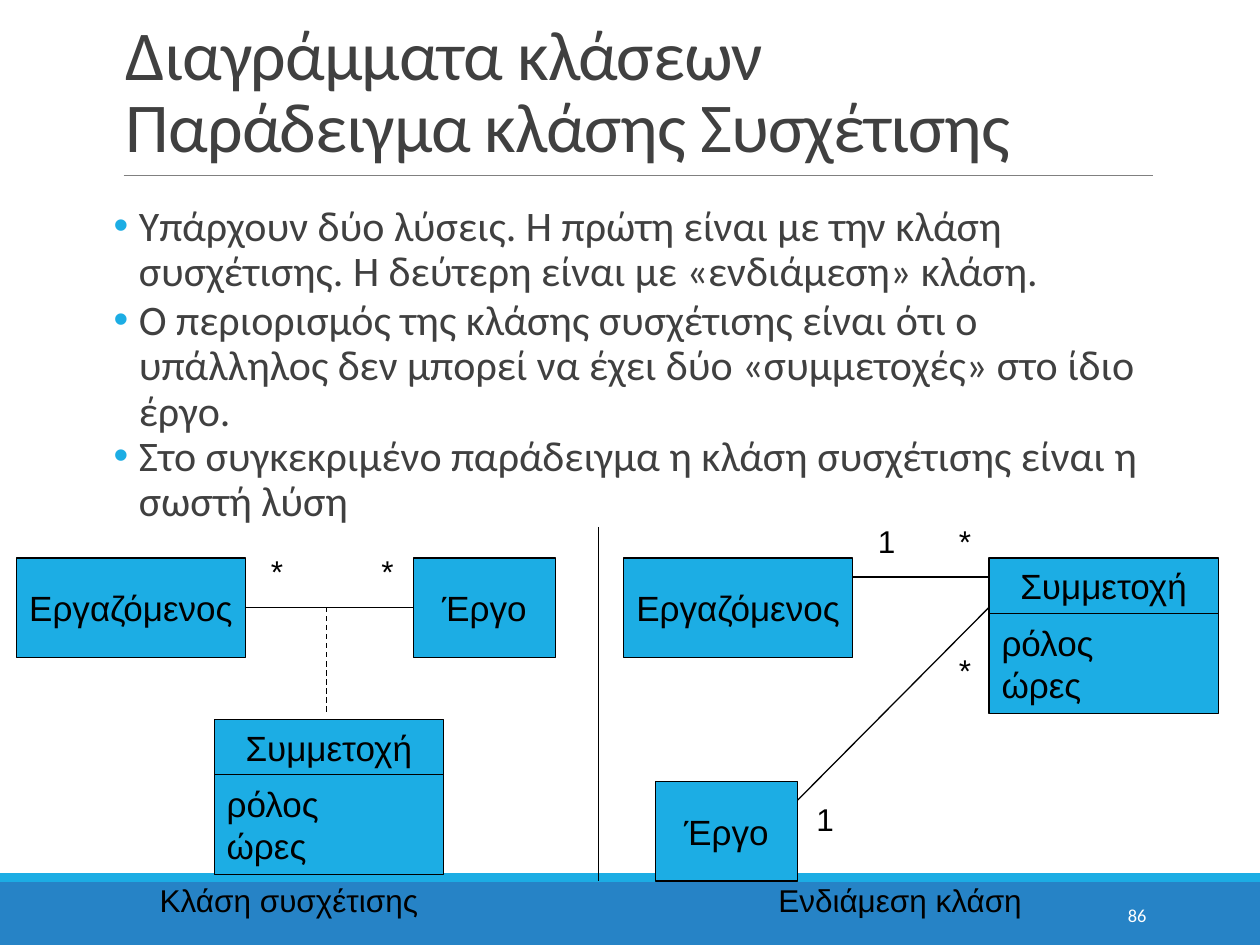
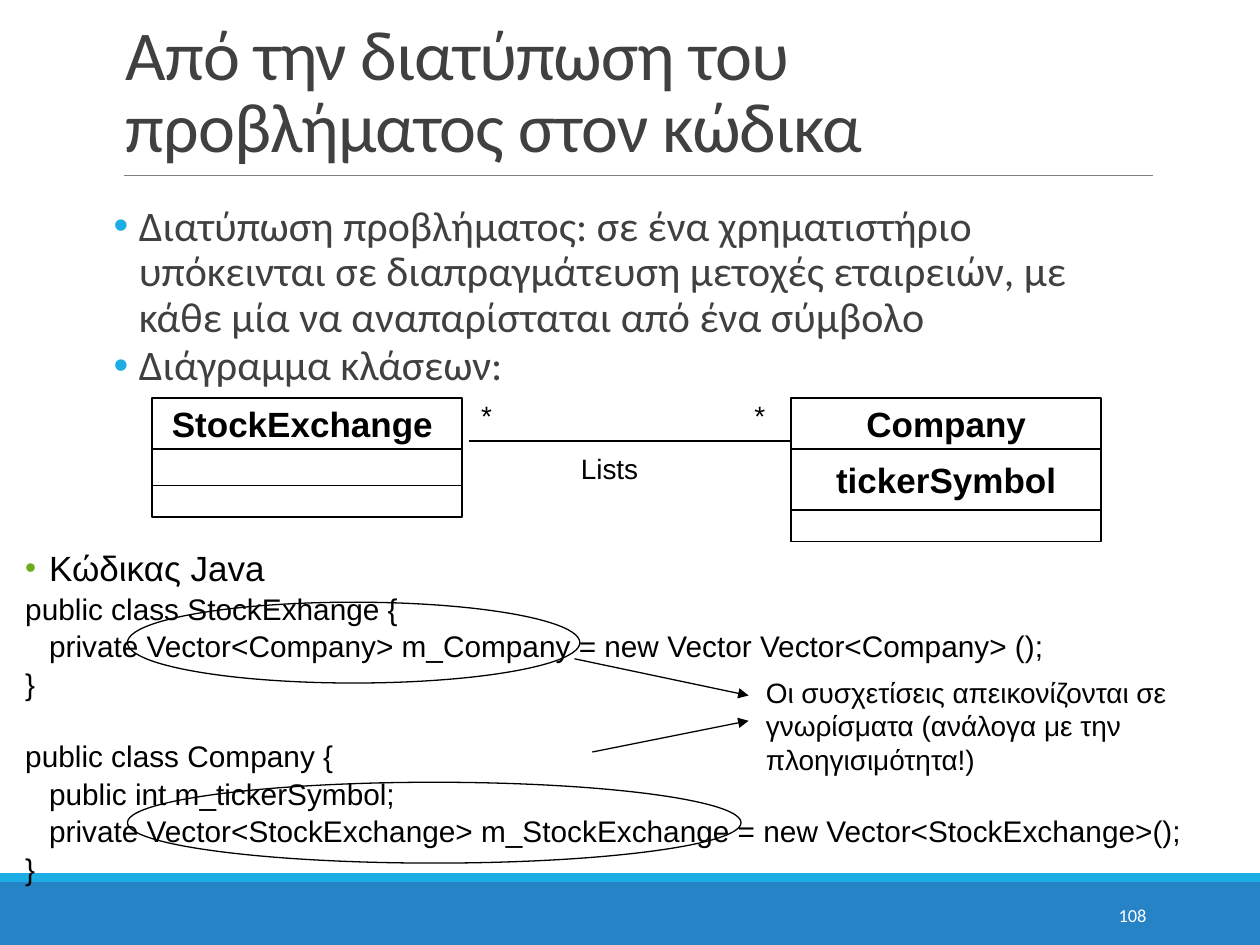
from pptx import Presentation
from pptx.dml.color import RGBColor
from pptx.enum.dml import MSO_LINE_DASH_STYLE as Dash
from pptx.enum.shapes import MSO_CONNECTOR as Connector
from pptx.enum.shapes import MSO_SHAPE as Shape
from pptx.enum.text import MSO_ANCHOR as Anchor
from pptx.enum.text import PP_ALIGN as Align
from pptx.oxml.ns import qn
from pptx.util import Cm, Pt
from lxml.etree import SubElement

SKY = RGBColor(0x1C, 0xAD, 0xE4)
BLUE = RGBColor(0x26, 0x83, 0xC6)
GREEN = RGBColor(0x6E, 0xAC, 0x1C)
INK = RGBColor(0x40, 0x40, 0x40)
GRAY = RGBColor(0x80, 0x80, 0x80)
BLACK = RGBColor(0, 0, 0)
WHITE = RGBColor(0xFF, 0xFF, 0xFF)

CLASS_WIDTH, PROJECT_WIDTH, STOCK_WIDTH = 4.62, 2.87, 6.25
NAME_HEIGHT, CLASS_HEIGHT = 1.12, 2.01
STOCK_NAME_HEIGHT, EMPTY_HEIGHT = 1.02, 0.64


def cm(*lengths):
    """Convert numbers of centimetres to lengths."""
    return [Cm(length) for length in lengths]


def add_run(paragraph, text, size, color=BLACK, font="Arial", bold=False):
    """Add one formatted run."""
    run = paragraph.add_run()
    run.text = text
    run.font.name = font
    run.font.size = Pt(size)
    run.font.color.rgb = color
    run.font.bold = bold
    return run


def add_text(slide, place, wrap=True, anchor=Anchor.TOP, inset=0.25):
    """Add an empty text box and return its frame."""
    frame = slide.shapes.add_textbox(*cm(*place)).text_frame
    frame.word_wrap = wrap
    frame.vertical_anchor = anchor
    frame.margin_left = frame.margin_right = Cm(inset)
    return frame


def next_paragraph(frame, index):
    """Return the first paragraph for index 0, otherwise a new one."""
    return frame.add_paragraph() if index else frame.paragraphs[0]


def indent(paragraph, left, first=0.0):
    """Set the left margin and the first-line indent."""
    properties = paragraph._p.get_or_add_pPr()
    properties.set("marL", str(Cm(left)))
    properties.set("indent", str(Cm(first)))


def add_bullet(paragraph, color, percent=100):
    """Give a paragraph a round bullet."""
    properties = paragraph._p.get_or_add_pPr()
    bullet_color = SubElement(properties, qn("a:buClr"))
    SubElement(bullet_color, qn("a:srgbClr"), val=str(color))
    SubElement(properties, qn("a:buSzPct"), val=str(percent * 1000))
    SubElement(properties, qn("a:buFont"), typeface="Arial")
    SubElement(properties, qn("a:buChar"), char="•")


def add_line(slide, start, end, color=BLACK, width=0.75, dashed=False, arrow=False):
    """Draw a straight line, optionally dashed or with an arrowhead."""
    line = slide.shapes.add_connector(Connector.STRAIGHT, *cm(*start, *end))
    line.line.color.rgb = color
    line.line.width = Pt(width)
    if dashed:
        line.line.dash_style = Dash.DASH
    if arrow:
        SubElement(line.line._get_or_add_ln(), qn("a:tailEnd"), type="triangle")
    SubElement(line._element.spPr, qn("a:effectLst"))


def add_figure(slide, kind, place, fill=None, outline=None):
    """Add a preset shape with an optional fill and outline width."""
    shape = slide.shapes.add_shape(kind, *cm(*place))
    shape.shadow.inherit = False
    if fill is None:
        shape.fill.background()
    else:
        shape.fill.solid()
        shape.fill.fore_color.rgb = fill
    if outline is None:
        shape.line.fill.background()
    else:
        shape.line.color.rgb = BLACK
        shape.line.width = Pt(outline)
    return shape


def add_class(slide, left, top, width, rows, fill=SKY, outline=0.75, bold=False):
    """Stack the compartments of a class, each a height and its lines."""
    for height, lines in rows:
        place = (left, top, width, height)
        frame = add_figure(slide, Shape.RECTANGLE, place, fill, outline).text_frame
        frame.word_wrap = False
        frame.vertical_anchor = Anchor.MIDDLE
        for index, text in enumerate(lines):
            paragraph = next_paragraph(frame, index)
            paragraph.alignment = Align.LEFT if len(lines) > 1 else Align.CENTER
            add_run(paragraph, text, 20, bold=bold)
        top += height


def add_label(slide, text, left, top, width, height=1.02, size=18):
    """Add a one-line label."""
    frame = add_text(slide, (left, top, width, height), wrap=False)
    add_run(frame.paragraphs[0], text, size)


def add_body(slide, points):
    """Add the bulleted body text."""
    frame = add_text(slide, (2.29, 4.01, 20.96, 13.39), inset=0)
    for index, text in enumerate(points):
        paragraph = next_paragraph(frame, index)
        indent(paragraph, 0.51, -0.51)
        paragraph.line_spacing = 0.9
        paragraph.space_before = Pt(0 if index else 12)
        paragraph.space_after = Pt(0 if index else 2)
        add_bullet(paragraph, SKY)
        add_run(paragraph, text, 24, INK, "Calibri")


def add_base_slide(presentation, title_lines, number, points):
    """Add a slide with bands, title, rule, body and slide number."""
    slide = presentation.slides.add_slide(presentation.slide_layouts[6])
    add_figure(slide, Shape.RECTANGLE, (0, 17.78, 25.4, 1.27), BLUE)
    add_figure(slide, Shape.RECTANGLE, (0, 17.6, 25.4, 0.18), SKY)
    add_line(slide, (2.49, 3.53), (23.24, 3.53), GRAY, 0.5)
    title = add_text(slide, (2.29, 0.28, 20.96, 3.2), anchor=Anchor.BOTTOM)
    paragraph = title.paragraphs[0]
    paragraph.line_spacing = 0.85
    for index, text in enumerate(title_lines):
        if index:
            paragraph.add_line_break()
        run = add_run(paragraph, text, 40, INK, "Calibri")
        run._r.get_or_add_rPr().set("spc", "-50")
    add_body(slide, points)
    footer = add_text(slide, (20.62, 17.93, 2.74, 1.02), anchor=Anchor.MIDDLE)
    footer.paragraphs[0].alignment = Align.RIGHT
    add_run(footer.paragraphs[0], number, 10.5, WHITE, "Calibri")
    return slide


def add_code(slide, heading, lines):
    """Add the code listing from (text, indent, space before) rows."""
    frame = add_text(slide, (0.46, 10.9, 24.51, 6.5), inset=0.05)
    paragraph = frame.paragraphs[0]
    indent(paragraph, 0.48, -0.48)
    paragraph.space_before = Pt(1)
    add_bullet(paragraph, GREEN, 90)
    add_run(paragraph, heading, 20)
    for text, left, gap in lines:
        paragraph = frame.add_paragraph()
        indent(paragraph, left)
        paragraph.space_before = Pt(gap)
        add_run(paragraph, text, 17)


def build_association_slide(presentation):
    """Compare an association class with an intermediate class."""
    slide = add_base_slide(
        presentation,
        ["Διαγράμματα κλάσεων", "Παράδειγμα κλάσης Συσχέτισης"],
        "86",
        ["Υπάρχουν δύο λύσεις. Η πρώτη είναι με την κλάση συσχέτισης. "
         "Η δεύτερη είναι με «ενδιάμεση» κλάση.",
         "Ο περιορισμός της κλάσης συσχέτισης είναι ότι ο υπάλληλος δεν μπορεί "
         "να έχει δύο «συμμετοχές» στο ίδιο έργο.",
         "Στο συγκεκριμένο παράδειγμα η κλάση συσχέτισης είναι η σωστή λύση"])
    employee = [(CLASS_HEIGHT, ["Εργαζόμενος"])]
    project = [(CLASS_HEIGHT, ["Έργο"])]
    participation = [(NAME_HEIGHT, ["Συμμετοχή"]), (CLASS_HEIGHT, ["ρόλος", "ώρες"])]
    for left, top, width, rows in [
            (0.33, 11.25, CLASS_WIDTH, employee),
            (8.33, 11.25, PROJECT_WIDTH, project),
            (4.32, 14.5, CLASS_WIDTH, participation),
            (12.57, 11.25, CLASS_WIDTH, employee),
            (19.94, 11.25, CLASS_WIDTH, participation),
            (13.21, 15.75, PROJECT_WIDTH, project)]:
        add_class(slide, left, top, width, rows)
    add_line(slide, (4.95, 12.24), (8.33, 12.24))
    add_line(slide, (6.58, 12.24), (6.58, 14.38), dashed=True)
    add_line(slide, (12.07, 10.62), (12.07, 17.75))
    add_line(slide, (17.2, 11.63), (19.94, 11.63))
    add_line(slide, (16.08, 16.13), (19.94, 12.24))
    for left, top in [(5.21, 11), (7.44, 11), (19.08, 10.39), (19.08, 13)]:
        add_label(slide, "*", left, top, 0.76)
    for left, top in [(17.45, 10.39), (16.21, 16)]:
        add_label(slide, "1", left, top, 0.86)
    add_label(slide, "Κλάση συσχέτισης", 2.97, 17.63, 5.74)
    add_label(slide, "Ενδιάμεση κλάση", 15.44, 17.63, 5.44)


def build_code_slide(presentation):
    """Show a class diagram and the code that follows from it."""
    slide = add_base_slide(
        presentation,
        ["Από την διατύπωση του προβλήματος στον κώδικα"],
        "108",
        ["Διατύπωση προβλήματος: σε ένα χρηματιστήριο υπόκεινται σε "
         "διαπραγμάτευση μετοχές εταιρειών, με κάθε μία να αναπαρίσταται "
         "από ένα σύμβολο",
         "Διάγραμμα κλάσεων:"])
    for left, name, attribute_height, attributes in [
            (3.07, "StockExchange ", 0.74, []),
            (15.95, "Company", 1.23, ["tickerSymbol"])]:
        rows = [(STOCK_NAME_HEIGHT, [name]), (attribute_height, attributes),
                (EMPTY_HEIGHT, [])]
        add_class(slide, left, 8.03, STOCK_WIDTH, rows, WHITE, 1, True)
    add_line(slide, (9.45, 8.89), (15.95, 8.89))
    for text, left, top, width in [
            ("*", 9.45, 7.9, 0.74), ("*", 14.96, 7.9, 0.74),
            ("Lists", 11.46, 8.97, 1.68)]:
        add_label(slide, text, left, top, width, 0.94, 16)
    add_code(slide, "Κώδικας Java", [
        ("public class StockExhange {", 0, 1),
        ("private Vector<Company> m_Company = new Vector Vector<Company> ();", 0.48, 1),
        ("}", 0, 1),
        ("public class Company {", 0, 21),
        ("public int m_tickerSymbol;", 0.48, 1),
        ("private Vector<StockExchange> m_StockExchange = "
         "new Vector<StockExchange>();", 0.48, 1),
        ("}", 0, 1)])
    for top, width in [(12.14, 9.12), (15.77, 12.37)]:
        add_figure(slide, Shape.OVAL, (2.57, top, width, 1.63), outline=0.75)
    add_line(slide, (11.58, 13.28), (15.09, 14.02), arrow=True)
    add_line(slide, (11.94, 15.16), (15.09, 14.53), arrow=True)
    note = add_text(slide, (15.19, 13.49, 9.96, 2.29))
    add_run(note.paragraphs[0], "Οι συσχετίσεις απεικονίζονται σε γνωρίσματα "
            "(ανάλογα με την πλοηγισιμότητα!)", 16)


def main():
    """Build and save the presentation."""
    presentation = Presentation()
    presentation.slide_width, presentation.slide_height = cm(25.4, 19.05)
    build_association_slide(presentation)
    build_code_slide(presentation)
    presentation.save("out.pptx")


if __name__ == "__main__":
    main()
